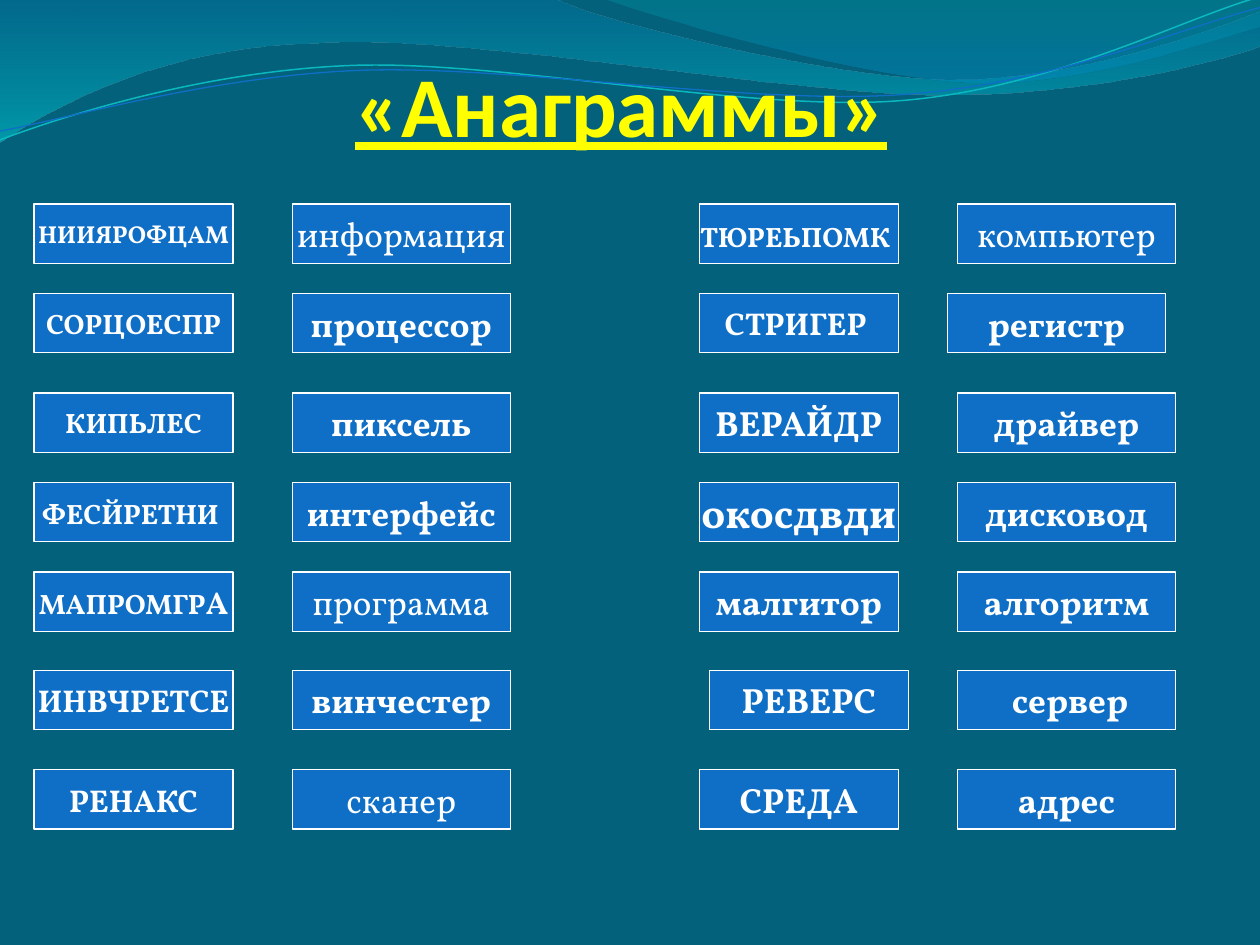
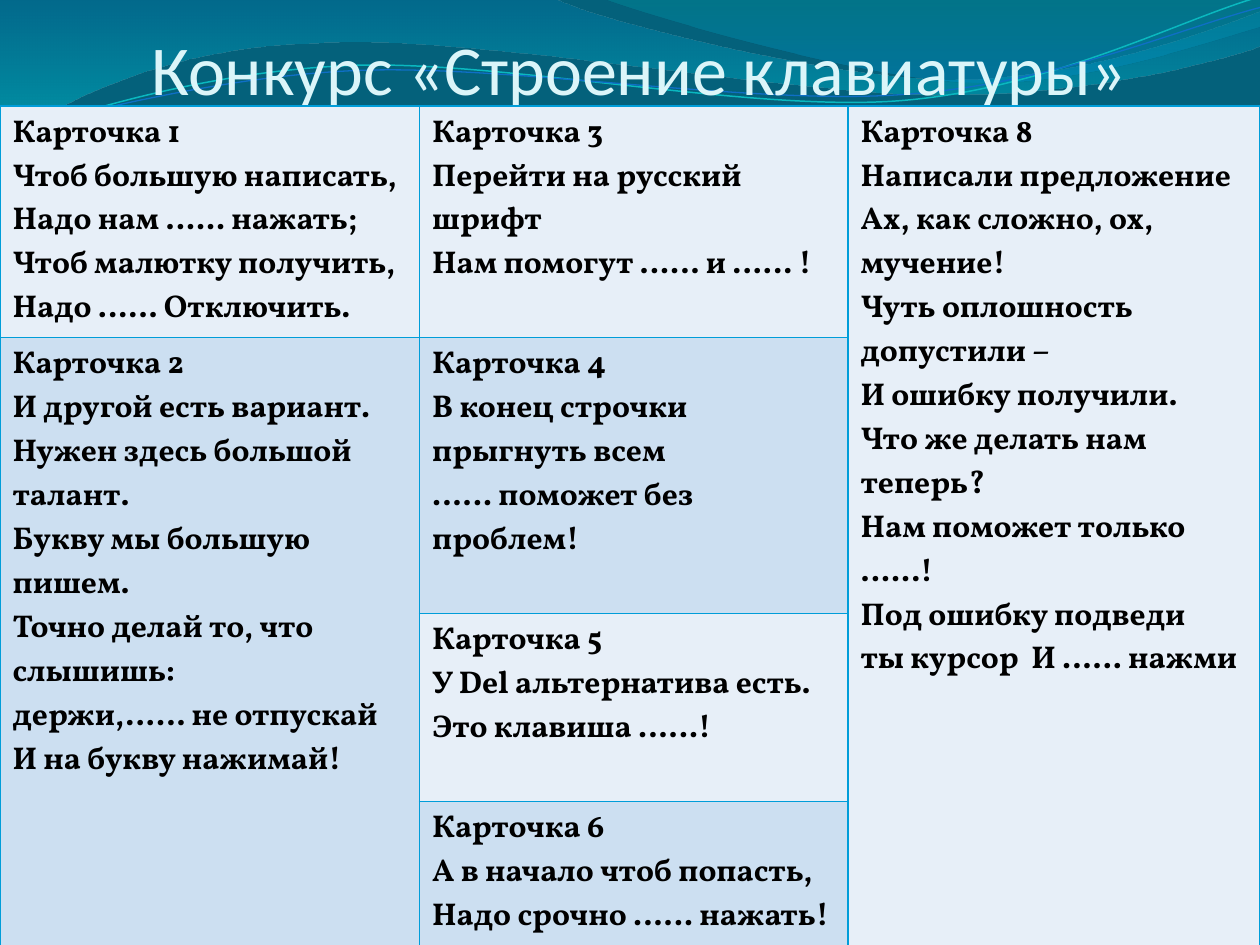
from math import cos, radians, sin

from lxml.etree import SubElement
from pptx import Presentation
from pptx.dml.color import RGBColor
from pptx.enum.shapes import MSO_SHAPE
from pptx.enum.text import MSO_ANCHOR, PP_ALIGN
from pptx.oxml.ns import qn
from pptx.util import Inches, Pt

DEEP = RGBColor(0x04, 0x61, 0x7B)
BLUE = RGBColor(0x0F, 0x6F, 0xC6)
TEAL = RGBColor(0x0A, 0xB8, 0xBF)
SKY = RGBColor(0x00, 0x9D, 0xD9)
WHITE = RGBColor(0xFF, 0xFF, 0xFF)
BLACK = RGBColor(0x00, 0x00, 0x00)
YELLOW = RGBColor(0xFF, 0xFF, 0x00)
ICE = RGBColor(0xDB, 0xF5, 0xF9)
PALE = RGBColor(0xE7, 0xEF, 0xF8)
MIST = RGBColor(0xCC, 0xDF, 0xF1)
TITLE_FONT, BODY_FONT = "Calibri", "Vollkorn"
WAVE_TILT = -2.7

BANDS = [
    ([[(0, 0)], [(4.4, -0.01)],
      [(4.76, 0.17), (6.64, 0.63), (7.58, 0.63)],
      [(8.53, 0.63), (9.58, 0.26), (10, 0.09)], [(10.01, 0.36)],
      [(9.83, 0.44), (8.7, 0.76), (7.46, 0.75)],
      [(6.22, 0.75), (3.82, 0.28), (2.57, 0.34)],
      [(1.29, 0.36), (0.46, 0.83), (-0.01, 1.13)], [(0, 0)]],
     [(0, RGBColor(0x00, 0x74, 0xA1), 45), (1, RGBColor(0x00, 0xC6, 0xCF), 55)]),
    ([[(4.79, -0.01)],
      [(5.09, 0.11), (6.82, 0.62), (7.69, 0.65)],
      [(8.56, 0.69), (9.61, 0.32), (10, 0.21)], [(10, 0)], [(4.79, -0.01)]],
     [(0, RGBColor(0x00, 0xA1, 0xA9), 30), (0.8, RGBColor(0x00, 0x8B, 0xBF), 45)]),
]
WAVES = [
    ([[(0, 1.11)],
      [(0.48, 0.93), (1.58, 0.57), (2.77, 0.52)],
      [(3.95, 0.47), (5.93, 0.89), (7.13, 0.8)],
      [(8.33, 0.71), (9.38, 0.15), (9.98, -0.02)]], (4.99, 0.58), TEAL, 0.85),
    ([[(0, 1.04)],
      [(0.47, 0.96), (1.64, 0.61), (2.83, 0.56)],
      [(4.03, 0.51), (5.97, 0.84), (7.17, 0.75)],
      [(8.36, 0.67), (9.41, 0.21), (10, 0.06)]], (5, 0.59), BLUE, 0.75),
]


def turn(point, center, degrees):
    c, s = cos(radians(degrees)), sin(radians(degrees))
    dx, dy = point[0] - center[0], point[1] - center[1]
    return center[0] + dx * c - dy * s, center[1] + dx * s + dy * c


class Deck:
    def __init__(self):
        self.prs = Presentation()
        self.prs.slide_width, self.prs.slide_height = Inches(10), Inches(7.5)

    def slide(self):
        self.s = self.prs.slides.add_slide(self.prs.slide_layouts[6])
        fill = self.s.background.fill
        fill.solid()
        fill.fore_color.rgb = DEEP
        for segments, stops in BANDS:
            self.band(segments, stops)
        for segments, center, color, width in WAVES:
            self.wave(segments, center, color, width)

    def outline(self, segments, close):
        points = [(Inches(x), Inches(y)) for segment in segments for x, y in segment]
        builder = self.s.shapes.build_freeform(*points[0])
        builder.add_line_segments(points[1:], close=close)
        sp = builder.convert_to_shape()
        sp.shadow.inherit = False
        lines = list(sp.element.iter(qn("a:lnTo")))
        for segment in segments[1:]:
            used, lines = lines[:len(segment)], lines[len(segment):]
            if len(segment) == 3:
                used[0].tag
                curve = SubElement(used[0].getparent(), qn("a:cubicBezTo"))
                used[0].addprevious(curve)
                for line in used:
                    curve.append(line[0])
                    line.getparent().remove(line)
        return sp

    def band(self, segments, stops):
        sp = self.outline(segments, True)
        sp.line.fill.background()
        sp.fill.gradient()
        sp.fill.gradient_angle = 270
        for stop, (position, color, _) in zip(sp.fill.gradient_stops, stops):
            stop.position = position
            stop.color.rgb = color
        for clr, (_, _, opacity) in zip(sp.element.iter(qn("a:srgbClr")), stops):
            SubElement(clr, qn("a:alpha"), val=str(opacity * 1000))

    def wave(self, segments, center, color, width):
        level = [[turn(point, center, -WAVE_TILT) for point in segment] for segment in segments]
        sp = self.outline(level, False)
        sp.rotation = WAVE_TILT
        sp.fill.background()
        sp.line.color.rgb = color
        sp.line.width = Pt(width)

    def style(self, p, name, size, color, bold):
        p.font.name = name
        p.font.size = Pt(size)
        p.font.color.rgb = color
        p.font.bold = bold

    def title(self, text, left, top, height, size, color, strong=False):
        sp = self.s.shapes.add_textbox(Inches(left), Inches(top), Inches(9), Inches(height))
        tf = sp.text_frame
        tf.word_wrap = True
        tf.vertical_anchor = MSO_ANCHOR.BOTTOM
        tf.margin_left = tf.margin_right = tf.margin_bottom = 0
        p = tf.paragraphs[0]
        p.alignment = PP_ALIGN.CENTER
        self.style(p, TITLE_FONT, size, color, strong)
        r = p.add_run()
        r.text = text
        r.font.underline = strong
        return p

    def word(self, left, top, width, runs, bold=True):
        sp = self.s.shapes.add_shape(
            MSO_SHAPE.RECTANGLE, Inches(left), Inches(top), Inches(width), Inches(0.47))
        sp.shadow.inherit = False
        sp.fill.solid()
        sp.fill.fore_color.rgb = BLUE
        sp.line.color.rgb = WHITE
        sp.line.width = Pt(0.75)
        tf = sp.text_frame
        tf.word_wrap = False
        tf.vertical_anchor = MSO_ANCHOR.MIDDLE
        p = tf.paragraphs[0]
        p.alignment = PP_ALIGN.CENTER
        self.style(p, BODY_FONT, runs[0][1], WHITE, bold)
        for text, size in runs:
            r = p.add_run()
            r.text = text
            if size != runs[0][1]:
                r.font.size = Pt(size)

    def table(self, top, widths, heights, cards):
        table = self.s.shapes.add_table(
            len(heights), len(widths), 0, Inches(top),
            Inches(sum(widths)), Inches(sum(heights))).table
        table.first_row = table.horz_banding = False
        for column, width in zip(table.columns, widths):
            column.width = Inches(width)
        for row, height in zip(table.rows, heights):
            row.height = Inches(height)
        for cell in table.iter_cells():
            self.border(cell)
        for row, column, last_row, text in cards:
            cell = table.cell(row, column)
            if last_row > row:
                cell.merge(table.cell(last_row, column))
            cell.fill.solid()
            cell.fill.fore_color.rgb = MIST if row % 2 else PALE
            p = cell.text_frame.paragraphs[0]
            p.text = text
            self.style(p, BODY_FONT, 18, BLACK, True)

    def border(self, cell):
        tcPr = cell._tc.get_or_add_tcPr()
        for side in "LRTB":
            ln = SubElement(tcPr, qn("a:ln" + side), w=str(Pt(1)))
            fill = SubElement(ln, qn("a:solidFill"))
            SubElement(fill, qn("a:srgbClr"), val=str(SKY))


deck = Deck()

deck.slide()
p = deck.title("«Анаграммы»", 0.5, 0.77, 0.46, 48.6, YELLOW, strong=True)
r = p.add_run()
r.text = " "
r.font.size = Pt(45)
r.font.bold = False

TOPS = [1.62, 2.33, 3.12, 3.83, 4.54, 5.32, 6.11]
LEFT_WORDS = [
    ([("НИИЯРОФЦАМ", 14)], "информация"),
    ([("СОРЦОЕСПР", 16)], "процессор"),
    ([("КИПЬЛЕС", 16)], "пиксель"),
    ([("ФЕСЙРЕТНИ", 16), (" ", 18)], "интерфейс"),
    ([("МАПРОМГР", 16), ("А", 18)], "программа"),
    ([("ИНВЧРЕТСЕ", 18)], "винчестер"),
    ([("РЕНАКС", 18)], "сканер"),
]
RIGHT_WORDS = [
    ([("ТЮРЕЬПОМК", 16), (" ", 20)], "компьютер"),
    ([("СТРИГЕР ", 18)], "регистр"),
    ([("ВЕРАЙДР", 20)], "драйвер"),
    ([("окосдвди", 24)], "дисковод"),
    ([("малгитор", 20)], "алгоритм"),
    ([(" РЕВЕРС ", 20)], " сервер"),
    ([("СРЕДА", 20)], "адрес"),
]
LIGHT = {"информация", "программа", "сканер", "компьютер"}
SHIFTS = {"регистр": (0, -0.08), " сервер": (0.08, 0)}
for left, words in ((0.27, LEFT_WORDS), (5.55, RIGHT_WORDS)):
    for top, (anagram, answer) in zip(TOPS, words):
        anagram_shift, answer_shift = SHIFTS.get(answer, (0, 0))
        deck.word(left + anagram_shift, top, 1.58, anagram)
        deck.word(left + 2.05 + answer_shift, top, 1.73, [(answer, 20)], answer not in LIGHT)

deck.slide()
deck.title(" Конкурс «Строение клавиатуры»", 0.51, 0, 0.87, 40, ICE)
CARDS = [
    (0, 0, 0, "Карточка 1\nЧтоб большую написать,\u00a0\nНадо нам …... нажать; \n"
              "Чтоб малютку получить,\nНадо …... Отключить."),
    (0, 1, 0, "Карточка 3\nПерейти на русский шрифт\u00a0\nНам помогут …… и …… !\u00a0"),
    (0, 2, 3, "Карточка 8\nНаписали предложение \nАх, как сложно, ох, мучение!\n"
              "Чуть оплошность допустили –\u00a0\nИ ошибку получили.\n"
              "Что же делать нам теперь?\nНам поможет только …...! \n"
              "Под ошибку подведи\u00a0\nты курсор\u00a0 И …... нажми \u00a0"),
    (1, 0, 3, "Карточка 2\nИ другой есть вариант.\nНужен здесь большой талант.\n"
              "Букву мы большую пишем.\nТочно делай то, что слышишь:\u00a0\n"
              "держи,…… не отпускай \nИ на букву нажимай!"),
    (1, 1, 1, "Карточка 4\nВ конец строчки прыгнуть всем\n…… поможет без проблем! "),
    (2, 1, 2, "Карточка 5\nУ Del альтернатива есть.\nЭто клавиша ……! "),
    (3, 1, 3, "Карточка 6\nА в начало чтоб попасть,\nНадо срочно …… нажать!"),
]
deck.table(0.84, [3.33, 3.4, 3.27], [1.84, 2.19, 1.49, 1.26], CARDS)

deck.prs.save("out.pptx")
